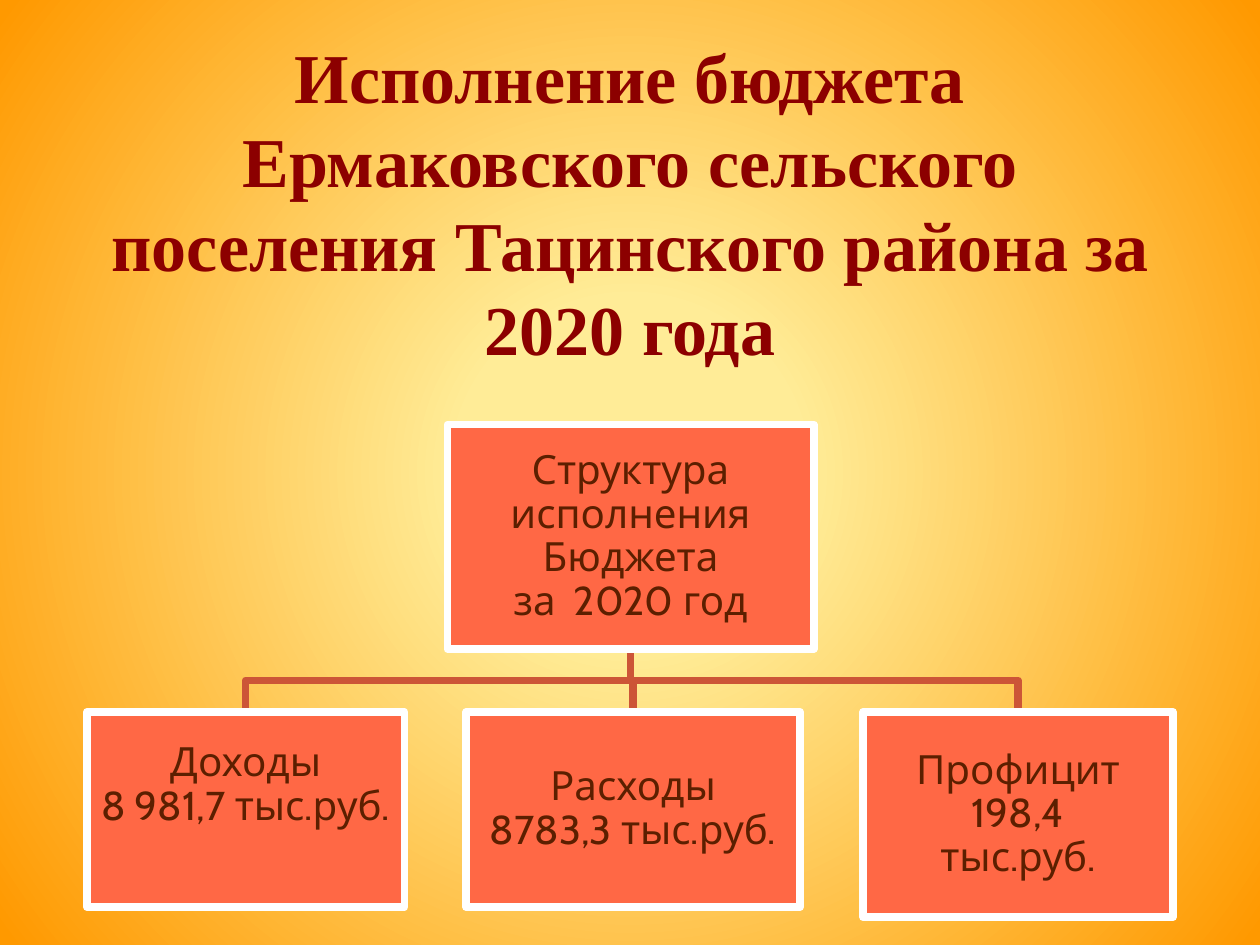
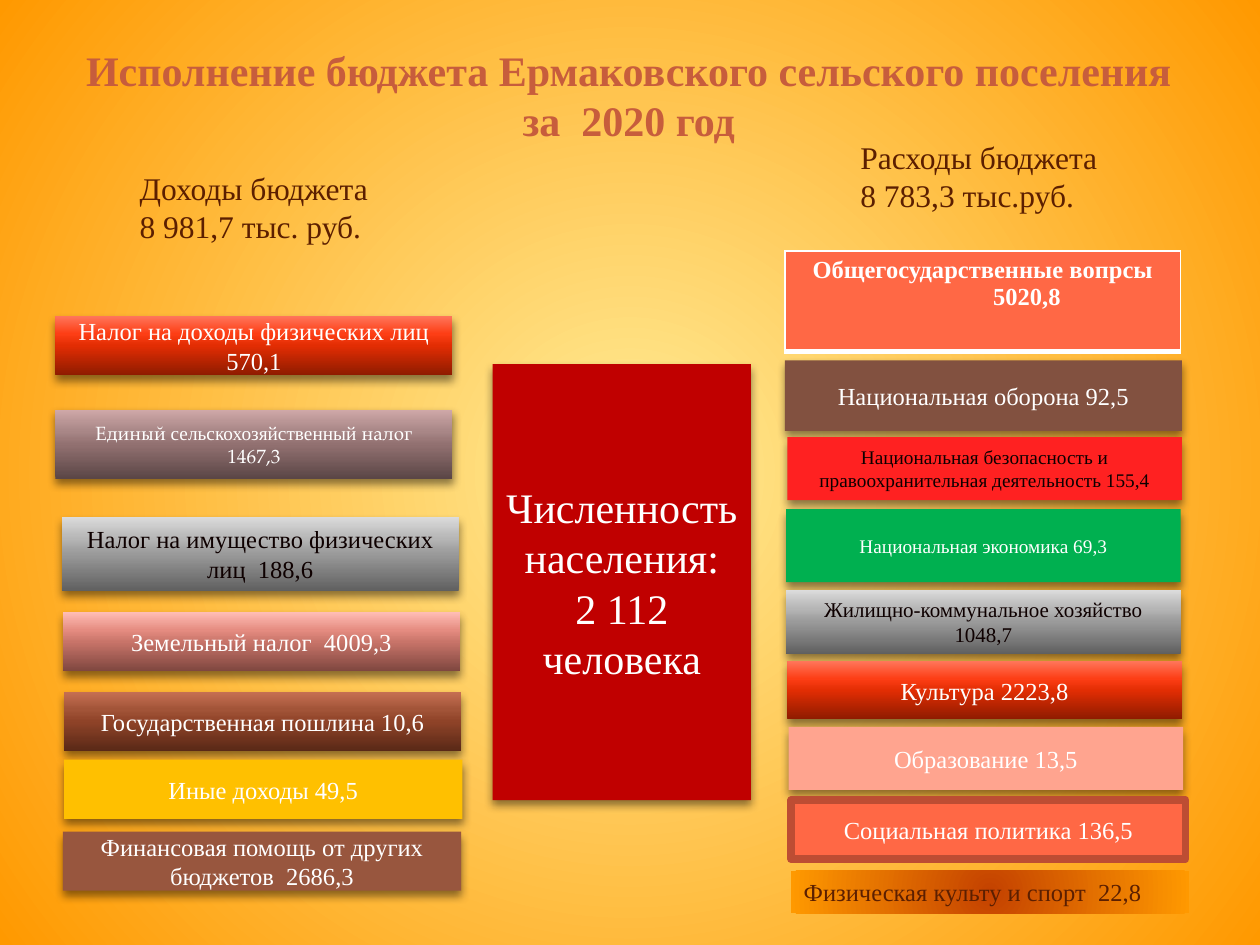
from pptx import Presentation
from pptx.dml.color import RGBColor
from pptx.enum.shapes import MSO_SHAPE
from pptx.enum.text import MSO_ANCHOR, MSO_AUTO_SIZE, PP_ALIGN
from pptx.oxml import parse_xml
from pptx.oxml.ns import nsdecls
from pptx.util import Inches, Pt

WHITE = RGBColor(0xFF, 0xFF, 0xFF)
BLACK = RGBColor(0x0E, 0x00, 0x00)
BROWN = RGBColor(0x5C, 0x1F, 0x00)
WINE = RGBColor(0x8C, 0x00, 0x00)
RUST = RGBColor(0xC7, 0x5D, 0x3C)
CORAL = RGBColor(0xFF, 0x68, 0x45)
BRICK = RGBColor(0xCC, 0x55, 0x37)
EDGE = RGBColor(0xBD, 0x4D, 0x33)
CRIMSON = RGBColor(0xC0, 0x00, 0x00)
COCOA = RGBColor(0x82, 0x51, 0x40)
CLAY = RGBColor(0x98, 0x56, 0x3E)
GOLD = RGBColor(0xFF, 0xC0, 0x00)
RED = RGBColor(0xFF, 0x21, 0x21)
GREEN = RGBColor(0x00, 0xB0, 0x50)
PINK = RGBColor(0xFF, 0xA4, 0x8F)
CREAM = RGBColor(0xFF, 0xEC, 0x97)
ORANGE = RGBColor(0xFF, 0x99, 0x00)
EMBER = RGBColor(0xC4, 0x42, 0x00)


def ramp(*codes):
    return list(zip((0, 50, 70, 100), map(RGBColor.from_string, codes)))


FLAME = ramp("8E1B00", "E22D03", "FD3E15", "FF755A")
MAUVE = ramp("5B4646", "927171", "AA8888", "CFA8A8")
GREY = ramp("606060", "9A9A9A", "B5B5B5", "DCDCDC")
UMBER = ramp("5A2917", "8F4328", "A25438", "C56F52")
ROSE = ramp("7E463F", "C87469", "E58C81", "FFBDB5")

SERIF, SANS, BOOK = "Times New Roman", "Cabin", "TeX Gyre Pagella"
THICK = 4.33

HEADS = [
    ("Исполнение бюджета Ермаковского сельского поселения Тацинского района за 2020 года",
     (0.5, 0.3, 9, 2.6), 40, WINE, MSO_ANCHOR.MIDDLE),
    ("Исполнение бюджета Ермаковского сельского поселения за  2020 год",
     (0.54, 0.3, 8.9, 0.91), 24, RUST, MSO_ANCHOR.TOP),
]
GROUNDS = [[(22, CREAM), (99, ORANGE)], [(0, CREAM), (100, ORANGE)]]

ROOT = (["Структура", "исполнения", "Бюджета", "за  2020 год"], (3.55, 3.37, 2.91, 1.78), 0.02)
LEAVES = [
    (["Доходы", "8 981,7 тыс.руб."], (0.69, 5.65, 2.52, 1.55), 0.4),
    (["Расходы", "8783,3 тыс.руб."], (3.7, 5.65, 2.65, 1.55), 0.02),
    (["Профицит", "198,4", "тыс.руб."], (6.85, 5.65, 2.46, 1.63), 0.02),
]

SUMS = [
    (["Доходы бюджета", "8 981,7 тыс. руб."], (1.01, 1.29, 2.17, 0.71)),
    (["Расходы бюджета", "8 783,3 тыс.руб."], (6.73, 1.05, 3.08, 0.94)),
]
FARM = [[("Единый ", BOOK), ("сельскохозяйственный", SERIF), (" налог", BOOK)],
        [("1467,3", BOOK)]]
BARS = [
    (["Налог на доходы физических лиц 570,1"], (0.44, 2.51, 3.15, 0.47), FLAME, 14, WHITE),
    (FARM, (0.44, 3.25, 3.15, 0.55), MAUVE, 11, WHITE),
    (["Налог на имущество физических лиц  188,6"], (0.49, 4.1, 3.15, 0.59), GREY, 14, BLACK),
    (["Земельный налог  4009,3"], (0.5, 4.86, 3.15, 0.47), ROSE, 14, WHITE),
    (["Государственная пошлина 10,6"], (0.51, 5.49, 3.15, 0.47), UMBER, 14, WHITE),
    (["Иные доходы 49,5"], (0.51, 6.03, 3.16, 0.47), GOLD, 14, WHITE),
    (["Финансовая помощь от других бюджетов  2686,3"], (0.5, 6.6, 3.16, 0.47), CLAY, 14, WHITE),
    (["Численность населения:", "2 112", "человека"], (3.91, 2.89, 2.05, 3.46), CRIMSON, 24, WHITE),
    (["Национальная оборона 92,5"], (6.23, 2.86, 3.15, 0.56), COCOA, 14, WHITE),
    (["Национальная безопасность и правоохранительная деятельность 155,4"],
     (6.25, 3.47, 3.13, 0.5), RED, 11, BLACK),
    (["Национальная экономика 69,3"], (6.24, 4.04, 3.13, 0.58), GREEN, 11, WHITE),
    (["Жилищно-коммунальное хозяйство", "1048,7"], (6.24, 4.68, 3.13, 0.51), GREY, 12, BLACK),
    (["Культура 2223,8"], (6.25, 5.25, 3.13, 0.46), FLAME, 14, WHITE),
    (["Образование 13,5"], (6.26, 5.77, 3.13, 0.5), PINK, 14, WHITE),
]
SOCIAL = (["Социальная политика 136,5"], (6.28, 6.35, 3.13, 0.47))
SPORT = (["Физическая культу и спорт  22,8"], (6.28, 6.91, 3.16, 0.34))
STATE = (["Общегосударственные вопрсы", "5020,8"], (6.23, 1.99, 3.14, 0.8))
RULES = {"lnL": 1, "lnR": 1, "lnT": 1, "lnB": 3}


def assign(item, values):
    for key, value in values.items():
        setattr(item, key, value)


def lengths(at):
    return [Inches(n) for n in at]


def blend(root, stops, angle=None):
    marks = "".join(f'<a:gs pos="{pos * 1000}"><a:srgbClr val="{tint}"/></a:gs>'
                    for pos, tint in stops)
    if angle is None:
        way = ('<a:path path="circle"><a:fillToRect l="50000" t="50000" '
               'r="50000" b="50000"/></a:path>')
    else:
        way = f'<a:lin ang="{angle * 60000}" scaled="0"/>'
    solid = root.xpath(".//a:solidFill")[0]
    solid.getparent().replace(solid, parse_xml(
        f'<a:gradFill {nsdecls("a")} rotWithShape="1"><a:gsLst>{marks}</a:gsLst>{way}</a:gradFill>'))


def write(frame, lines, size, tint, face=SERIF, bold=False, align=PP_ALIGN.CENTER, space=None):
    for i, line in enumerate(lines):
        para = frame.add_paragraph() if i else frame.paragraphs[0]
        assign(para, {"alignment": align, "line_spacing": space})
        for text, name in [(line, face)] if isinstance(line, str) else line:
            run = para.add_run()
            run.text = text
            assign(run.font, {"name": name, "size": Pt(size), "bold": bold})
            run.font.color.rgb = tint


def start(deck, head, ground):
    text, at, size, tint, anchor = head
    slide = deck.slides.add_slide(deck.slide_layouts[5])
    slide.background.fill.solid()
    slide.background.fill.fore_color.rgb = CREAM
    blend(slide.element.xpath("p:cSld/p:bg")[0], ground)
    title = slide.shapes.title
    assign(title, dict(zip(("left", "top", "width", "height"), lengths(at))))
    assign(title.text_frame, {"vertical_anchor": anchor, "word_wrap": True,
                              "auto_size": MSO_AUTO_SIZE.NONE})
    write(title.text_frame, [text], size, tint, bold=True)
    return slide


def block(slide, at, fill, line=None):
    shape = slide.shapes.add_shape(MSO_SHAPE.RECTANGLE, *lengths(at))
    shape.shadow.inherit = False
    shape.fill.solid()
    shape.fill.fore_color.rgb = CORAL if isinstance(fill, list) else fill
    if line is None:
        shape.line.fill.background()
    else:
        shape.line.color.rgb = line
        shape.line.width = Pt(THICK)
    assign(shape.text_frame, {"word_wrap": True, "vertical_anchor": MSO_ANCHOR.MIDDLE})
    return shape


def shade(shape):
    shape.element.spPr.xpath("a:effectLst")[0].append(parse_xml(
        f'<a:outerShdw {nsdecls("a")} blurRad="{Pt(5)}" dist="{Pt(3)}" dir="5400000" '
        'rotWithShape="0"><a:srgbClr val="000000"><a:alpha val="45000"/></a:srgbClr></a:outerShdw>'))


def branch(slide, top, leaf):
    x, y = top[0] + top[2] / 2, top[1] + top[3]
    end = leaf[0] + leaf[2] / 2
    mid = (y + leaf[1]) / 2
    pen = slide.shapes.build_freeform(Inches(x), Inches(y))
    pen.add_line_segments([lengths(p) for p in ((x, mid), (end, mid), (end, leaf[1]))], close=False)
    shape = pen.convert_to_shape()
    shape.shadow.inherit = False
    shape.fill.background()
    shape.line.color.rgb = BRICK
    shape.line.width = Pt(THICK)


def tree(slide):
    for _, at, _ in LEAVES:
        branch(slide, ROOT[1], at)
    for lines, at, foot in [ROOT] + LEAVES:
        frame = block(slide, at, CORAL, WHITE).text_frame
        inset = Inches(0.02)
        assign(frame, {"margin_left": inset, "margin_right": inset,
                       "margin_top": inset, "margin_bottom": Inches(foot)})
        write(frame, lines, 23, BROWN, SANS, space=0.9)


def grid(slide):
    lines, at = STATE
    table = slide.shapes.add_table(1, 1, *lengths(at)).table
    cell = table.cell(0, 0)
    cell.fill.solid()
    cell.fill.fore_color.rgb = CORAL
    write(cell.text_frame, lines, 14, WHITE, bold=True)
    cell.text_frame.paragraphs[1].alignment = PP_ALIGN.CENTER
    cell.text_frame.paragraphs[1]._p.get_or_add_pPr().set("marL", str(Inches(0.7)))
    props = cell._tc.get_or_add_tcPr()
    for i, (side, width) in enumerate(RULES.items()):
        props.insert(i, parse_xml(
            f'<a:{side} {nsdecls("a")} w="{Pt(width)}"><a:solidFill>'
            f'<a:srgbClr val="{WHITE}"/></a:solidFill></a:{side}>'))


def budget(slide):
    for lines, at in SUMS:
        frame = slide.shapes.add_textbox(*lengths(at)).text_frame
        frame.word_wrap = True
        write(frame, lines, 18, BROWN, align=PP_ALIGN.LEFT)
    for lines, at, fill, size, tint in BARS:
        bar = block(slide, at, fill)
        if isinstance(fill, list):
            blend(bar.element.spPr, fill, 270)
        shade(bar)
        write(bar.text_frame, lines, size, tint)
    lines, at = SOCIAL
    write(block(slide, at, CORAL, EDGE).text_frame, lines, 14, WHITE)
    lines, at = SPORT
    bar = block(slide, at, ORANGE)
    blend(bar.element.spPr, [(0, EMBER), (100, ORANGE)])
    write(bar.text_frame, lines, 14, BROWN, align=PP_ALIGN.LEFT)
    grid(slide)


def main():
    deck = Presentation()
    assign(deck, {"slide_width": Inches(10), "slide_height": Inches(7.5)})
    for draw, head, ground in zip((tree, budget), HEADS, GROUNDS):
        draw(start(deck, head, ground))
    deck.save("out.pptx")


if __name__ == "__main__":
    main()
